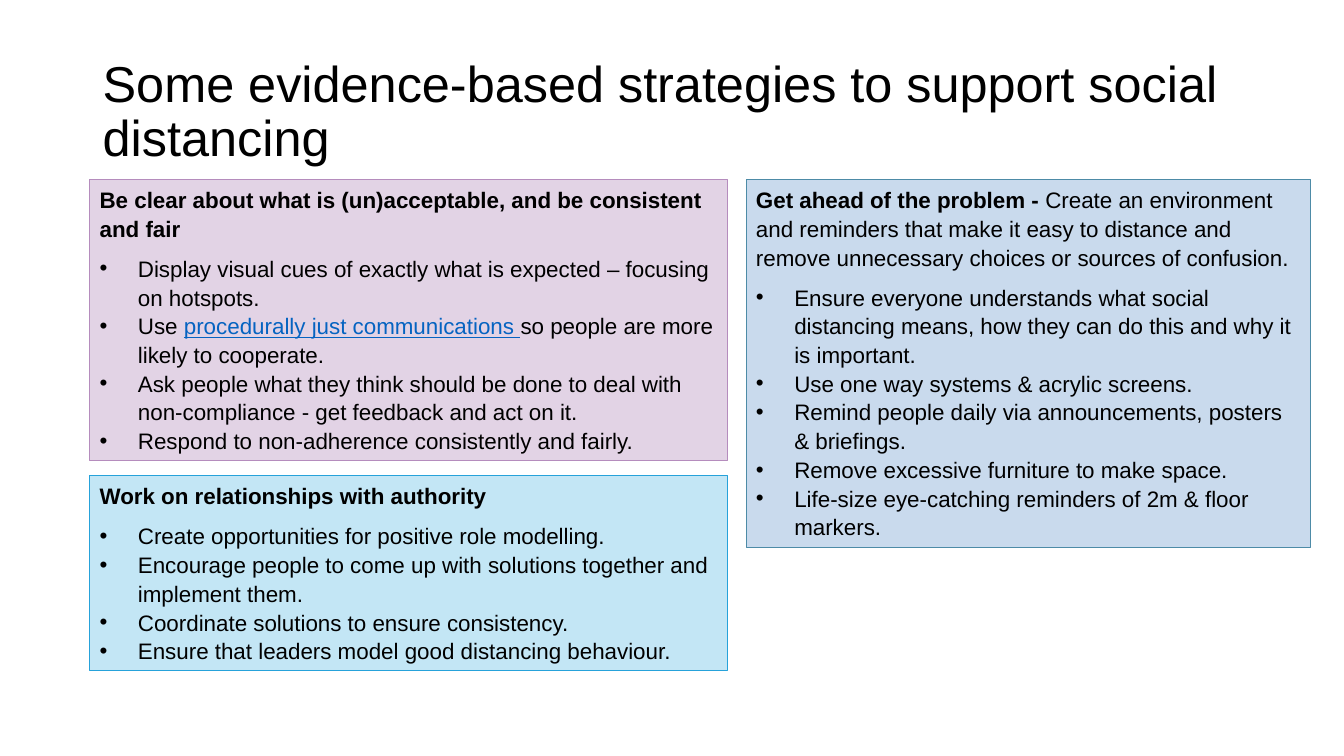
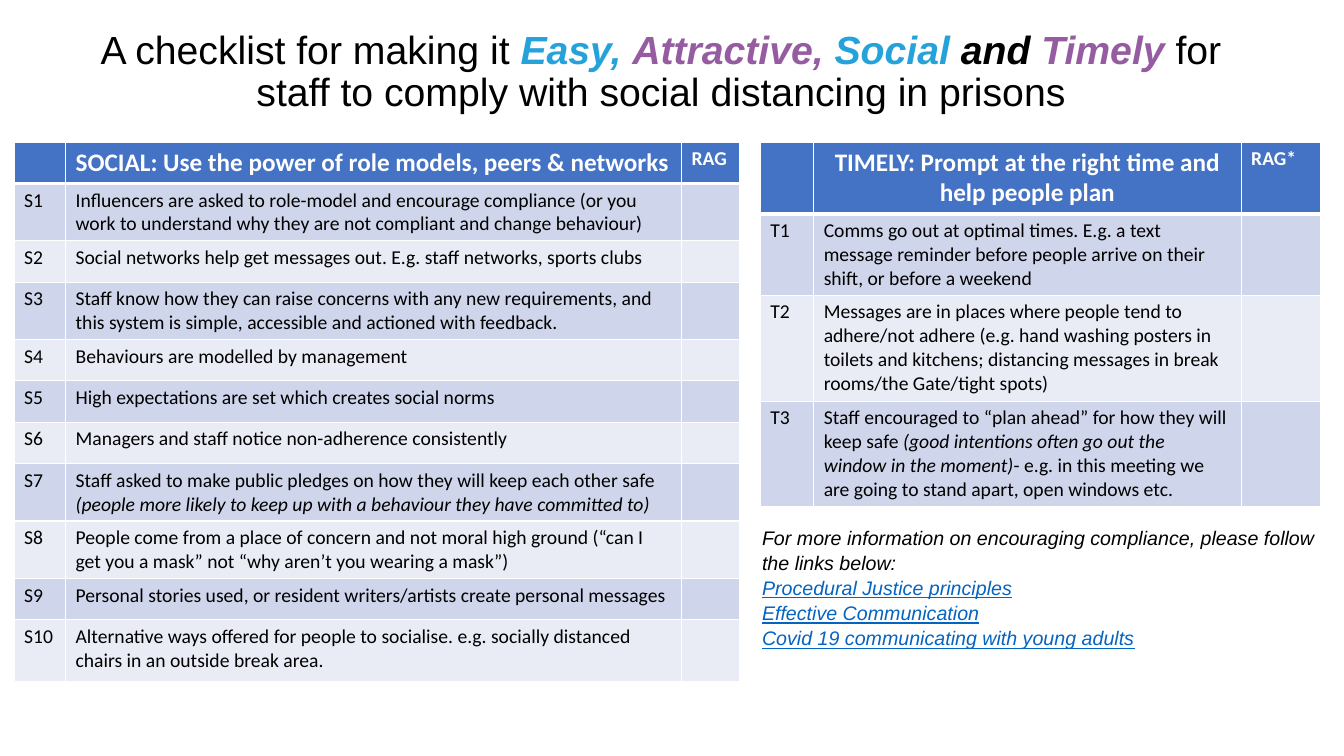
from dataclasses import dataclass, replace

from lxml import etree
from pptx import Presentation
from pptx import util as u
from pptx.dml import color
from pptx.enum import shapes, text
from pptx.oxml import ns

BLACK, WHITE, LINK = "000000", "FFFFFF", "0563C1"
BLUE, PURPLE = "26A2DA", "965CA1"
HEAD, BANDS = "4472C4", ("CFD5EA", "E9EBF5")
LEFT, CENTER = text.PP_ALIGN.LEFT, text.PP_ALIGN.CENTER
INDENT = u.Inches(0.38)


@dataclass(frozen=True)
class Style:
    size: float
    face: str = "Arial"
    ink: str = BLACK
    bold: bool = False
    slant: bool = False
    under: bool = False


@dataclass(frozen=True)
class Para:
    bits: tuple
    lines: float = 1.07
    after: float = 0
    mark: bool = False
    align: int = LEFT


@dataclass(frozen=True)
class Panel:
    area: tuple
    fill: str
    edge: str
    lead: tuple
    points: tuple


@dataclass(frozen=True)
class Grid:
    left: float
    top: float
    cols: tuple
    rows: tuple
    title: str
    rag: str
    code: str
    items: tuple
    align: int = LEFT


BODY = Style(16)
BOLD = replace(BODY, bold=True)
CELL = Style(14, "Calibri")
CELL_IT = replace(CELL, slant=True)
NOTE = Style(14, slant=True)
NOTE_LINK = replace(NOTE, ink=LINK, under=True)
BIG = Style(28)
WORD = replace(BIG, bold=True, slant=True)


def rgb(code: str):
    return color.RGBColor.from_string(code)


def place(area: tuple) -> list:
    return [u.Inches(v) for v in area]


def bit(words, style: Style) -> tuple:
    return words if isinstance(words, tuple) else (words, style)


def write(frame, paras: list) -> None:
    frame.word_wrap = True
    for i, para in enumerate(paras):
        p = frame.paragraphs[0] if i == 0 else frame.add_paragraph()
        if para.mark:
            props = p._p.get_or_add_pPr()
            props.set("marL", str(INDENT))
            props.set("indent", str(-INDENT))
            etree.SubElement(props, ns.qn("a:buFont")).set("typeface", "Arial")
            etree.SubElement(props, ns.qn("a:buChar")).set("char", "•")
        p.alignment = para.align
        p.line_spacing = para.lines
        p.space_after = u.Pt(para.after)
        for words, style in para.bits:
            run = p.add_run()
            run.text = words
            font = run.font
            font.name, font.size = style.face, u.Pt(style.size)
            font.bold, font.italic = style.bold, style.slant
            font.underline = style.under
            font.color.rgb = rgb(style.ink)


def add_text(slide, area: tuple, paras: list, anchor=text.MSO_ANCHOR.TOP) -> None:
    frame = slide.shapes.add_textbox(*place(area)).text_frame
    frame.vertical_anchor = anchor
    write(frame, paras)


def add_panel(slide, panel: Panel) -> None:
    box = slide.shapes.add_shape(shapes.MSO_SHAPE.RECTANGLE, *place(panel.area))
    box.shadow.inherit = False
    box.fill.solid()
    box.fill.fore_color.rgb = rgb(panel.fill)
    box.line.color.rgb = rgb(panel.edge)
    box.line.width = u.Pt(0.75)
    box.text_frame.vertical_anchor = text.MSO_ANCHOR.TOP
    last = len(panel.points) - 1
    paras = [Para(panel.lead, after=8)]
    for i, point in enumerate(panel.points):
        bits = point if isinstance(point, tuple) else ((point, BODY),)
        paras.append(Para(bits, after=8 if i == last else 0, mark=True))
    write(box.text_frame, paras)


def edge(cell, top: float, base: float) -> None:
    props = cell._tc.get_or_add_tcPr()
    for i, (side, width) in enumerate(zip("LRTB", (1, 1, top, base))):
        line = etree.Element(ns.qn(f"a:ln{side}"), w=str(u.Pt(width)))
        fill = etree.SubElement(line, ns.qn("a:solidFill"))
        etree.SubElement(fill, ns.qn("a:srgbClr")).set("val", WHITE)
        props.insert(i, line)


def add_grid(slide, grid: Grid) -> None:
    area = (grid.left, grid.top, sum(grid.cols), sum(grid.rows))
    table = slide.shapes.add_table(
        len(grid.rows), len(grid.cols), *place(area)).table
    for col, width in zip(table.columns, grid.cols):
        col.width = u.Inches(width)
    for row, height in zip(table.rows, grid.rows):
        row.height = u.Inches(height)
    small = replace(CELL, ink=WHITE, bold=True)
    large = replace(small, size=18)
    data = [((), ((grid.title, large),), ((grid.rag, small),))]
    for i, item in enumerate(grid.items, 1):
        bits = item if isinstance(item, tuple) else ((item, CELL),)
        data.append((((f"{grid.code}{i}", CELL),), bits, ()))
    for r, row in enumerate(data):
        for c, bits in enumerate(row):
            cell = table.cell(r, c)
            cell.fill.solid()
            cell.fill.fore_color.rgb = rgb(BANDS[(r - 1) % 2] if r else HEAD)
            edge(cell, 3 if r == 1 else 1, 1 if r else 3)
            if bits:
                align = grid.align if (r, c) == (0, 1) else LEFT
                write(cell.text_frame, [Para(bits, lines=1.0, align=align)])


PANELS = (
    Panel((7.4, 1.78, 5.6, 3.65), "C9DAED", "4D8BA7",
          (("Get ahead of the problem - ", BOLD),
           ("Create an environment and reminders that make it easy to distance "
            "and remove unnecessary choices or sources of confusion.", BODY)),
          ("Ensure everyone understands what social distancing means, "
           "how they can do this and why it is important.",
           "Use one way systems & acrylic screens.",
           "Remind people daily via announcements, posters & briefings.",
           "Remove excessive furniture to make space.",
           "Life-size eye-catching reminders of 2m & floor markers.")),
    Panel((0.89, 1.78, 6.33, 2.79), "E2D3E5", "B58CBD",
          (("Be clear about what is (un)acceptable, and be consistent and fair",
            BOLD),),
          ("Display visual cues of exactly what is expected – focusing on hotspots.",
           (("Use ", BODY),
            ("procedurally just communications ",
             replace(BODY, ink=LINK, under=True)),
            ("so people are more likely to cooperate.", BODY)),
           "Ask people what they think should be done to deal with "
           "non-compliance - get feedback and act on it.",
           "Respond to non-adherence consistently and fairly.")),
    Panel((0.89, 4.72, 6.33, 1.93), "C3E6F5", BLUE,
          (("Work on relationships with authority", BOLD),),
          ("Create opportunities for positive role modelling.",
           "Encourage people to come up with solutions together and implement them.",
           "Coordinate solutions to ensure consistency.",
           "Ensure that leaders model good distancing behaviour.")),
)

ONE, TWO = 0.41, 0.57
GRIDS = (
    Grid(0.14, 1.41, (0.51, 6.11, 0.58),
         (ONE, TWO, ONE, TWO, ONE, ONE, ONE, TWO, TWO, ONE, 0.61),
         "SOCIAL: Use the power of role models, peers & networks", "RAG", "S",
         ("Influencers are asked to role-model and encourage compliance (or you "
          "work to understand why they are not compliant and change behaviour)",
          "Social networks help get messages out. E.g. staff networks, sports clubs",
          "Staff know how they can raise concerns with any new requirements, and "
          "this system is simple, accessible and actioned with feedback.",
          "Behaviours are modelled by management",
          "High expectations are set which creates social norms",
          "Managers and staff notice non-adherence consistently",
          (("Staff asked to make public pledges on how they will keep each "
            "other safe ", CELL),
           ("(people more likely to keep up with a behaviour they have "
            "committed to)", CELL_IT)),
          "People come from a place of concern and not moral high ground (“can I "
          "get you a mask” not “why aren’t you wearing a mask”)",
          "Personal stories used, or resident writers/artists create personal messages",
          "Alternative ways offered for people to socialise. e.g. socially "
          "distanced chairs in an outside break area.")),
    Grid(7.54, 1.41, (0.53, 4.24, 0.79), (0.71, 0.81, 1.05, 1.05),
         "TIMELY: Prompt at the right time and help people plan", "RAG*", "T",
         ("Comms go out at optimal times. E.g. a text message reminder before "
          "people arrive on their shift, or before a weekend",
          "Messages are in places where people tend to adhere/not adhere (e.g. "
          "hand washing posters in toilets and kitchens; distancing messages in "
          "break rooms/the Gate/tight spots)",
          (("Staff encouraged to “plan ahead” for how they will keep safe ", CELL),
           ("(good intentions often go out the window in the moment)", CELL_IT),
           ("- e.g. in this meeting we are going to stand apart, open windows etc.",
            CELL))),
         CENTER),
)

TITLE = (
    ("A checklist for making it ", BIG),
    ("Easy, ", replace(WORD, ink=BLUE)),
    ("Attractive, ", replace(WORD, ink=PURPLE)),
    ("Social ", replace(WORD, ink=BLUE)),
    ("and", WORD),
    (" Timely", replace(WORD, ink=PURPLE)),
    (" for staff to comply with social distancing in prisons", BIG),
)
LINKS = ("Procedural Justice principles", "Effective Communication",
         "Covid 19 communicating with young adults")


def main() -> None:
    deck = Presentation()
    deck.slide_width, deck.slide_height = u.Inches(13.33), u.Inches(7.5)
    blank = deck.slide_layouts[6]

    slide = deck.slides.add_slide(blank)
    head = "Some evidence-based strategies to support social distancing"
    add_text(slide, (0.92, 0.4, 11.5, 1.45),
             [Para(((head, Style(36)),), lines=0.9)], text.MSO_ANCHOR.MIDDLE)
    for panel in PANELS:
        add_panel(slide, panel)

    slide = deck.slides.add_slide(blank)
    for grid in GRIDS:
        add_grid(slide, grid)
    lead = ("For more information on encouraging compliance, "
            "please follow the links below:")
    add_text(slide, (7.46, 5.15, 5.73, 1.36),
             [Para(((lead, NOTE),))]
             + [Para(((link, NOTE_LINK),)) for link in LINKS])
    add_text(slide, (0.69, 0.25, 11.73, 0.95),
             [Para(TITLE, lines=0.9, align=CENTER)])
    deck.save("out.pptx")


if __name__ == "__main__":
    main()
